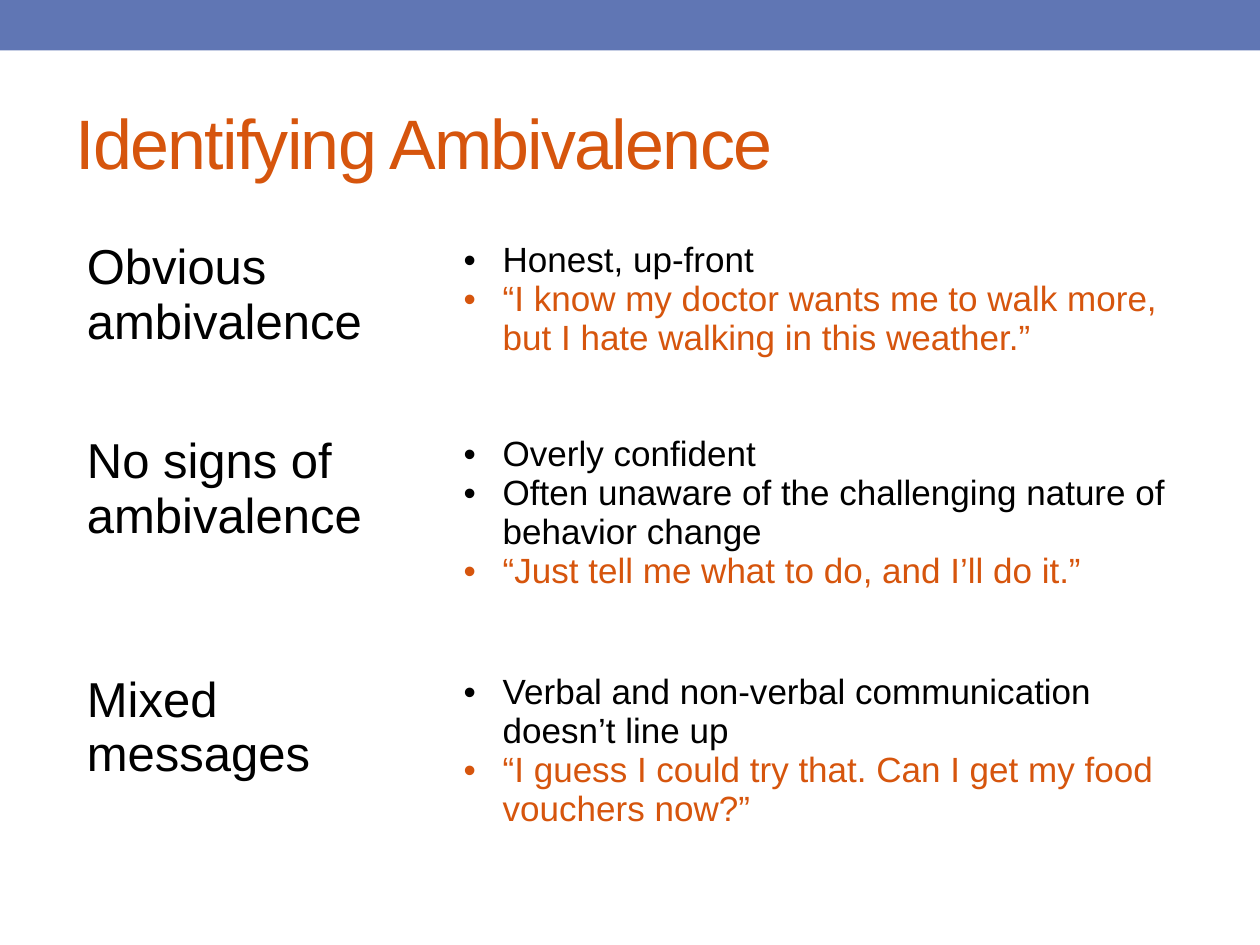
from pptx import Presentation
from pptx.dml.color import RGBColor
from pptx.enum.shapes import MSO_SHAPE
from pptx.enum.text import MSO_ANCHOR, PP_ALIGN
from pptx.oxml.ns import qn
from pptx.util import Inches, Pt
from lxml import etree

RECT = MSO_SHAPE.RECTANGLE
MIDDLE = MSO_ANCHOR.MIDDLE
LEFT = PP_ALIGN.LEFT

# Content: label, observations, client quote
TITLE = "Identifying Ambivalence"
ROWS = [
    ("Obvious ambivalence",
     ["Honest, up-front"],
     "“I know my doctor wants me to walk more, but I hate walking in this weather.”"),
    ("No signs of ambivalence",
     ["Overly confident",
      "Often unaware of the challenging nature of behavior change"],
     "“Just tell me what to do, and I’ll do it.”"),
    ("Mixed messages",
     ["Verbal and non-verbal communication doesn’t line up"],
     "“I guess I could try that. Can I get my food vouchers now?”"),
]

THEME = {
    "font": "Arial",
    "bar": RGBColor.from_string("6076B4"),
    "accent": RGBColor.from_string("D6550D"),
    "text": RGBColor.from_string("000000"),
    "title": 40, "label": 28, "bullet": 20,
}
COLS = [2.99, 5.86]
HEIGHTS = [1.54, 1.89, 1.89]
INDENT = Inches(0.31)


def style(para, size, color):
    para.alignment = LEFT
    for run in para.runs:
        run.font.name = THEME["font"]
        run.font.size = Pt(THEME[size])
        run.font.bold = False
        run.font.color.rgb = THEME[color]


def add_bullet(para):
    props = para._p.get_or_add_pPr()
    props.set("marL", str(INDENT))
    props.set("indent", str(-INDENT))
    font = etree.SubElement(props, qn("a:buFont"))
    font.set("typeface", THEME["font"])
    etree.SubElement(props, qn("a:buChar")).set("char", "•")


def main():
    deck = Presentation()
    deck.slide_width, deck.slide_height = Inches(10), Inches(7.5)
    slide = deck.slides.add_slide(deck.slide_layouts[5])

    # Top bar
    bar = slide.shapes.add_shape(RECT, 0, 0, deck.slide_width, Inches(0.4))
    bar.shadow.inherit = False
    bar.fill.solid()
    bar.fill.fore_color.rgb = THEME["bar"]
    bar.line.fill.background()

    # Title
    title = slide.shapes.title
    title.left, title.top = Inches(0.5), Inches(0.58)
    title.width, title.height = Inches(9), Inches(1.08)
    frame = title.text_frame
    frame.text = TITLE
    frame.vertical_anchor = MIDDLE
    head = frame.paragraphs[0]
    style(head, "title", "accent")
    head.runs[0]._r.get_or_add_rPr().set("spc", "-100")

    # Table
    table = slide.shapes.add_table(
        len(ROWS), len(COLS), Inches(0.59), Inches(1.86),
        Inches(sum(COLS)), Inches(sum(HEIGHTS))).table
    table.first_row = table.horz_banding = False
    for col, width in zip(table.columns, COLS):
        col.width = Inches(width)
    for row, height in zip(table.rows, HEIGHTS):
        row.height = Inches(height)

    # Plain cells without fill or borders
    for cell in table.iter_cells():
        props = cell._tc.get_or_add_tcPr()
        for side in ("lnL", "lnR", "lnT", "lnB"):
            line = etree.SubElement(props, qn("a:" + side), w="0")
            etree.SubElement(line, qn("a:noFill"))
        cell.fill.background()

    # Labels and bullets
    for row, (label, notes, quote) in zip(table.rows, ROWS):
        name, detail = row.cells
        name.text_frame.text = label
        style(name.text_frame.paragraphs[0], "label", "text")
        detail.text_frame.text = "\n".join(notes + [quote])
        for para in detail.text_frame.paragraphs:
            style(para, "bullet", "accent" if para.text == quote else "text")
            add_bullet(para)

    deck.save("out.pptx")


if __name__ == "__main__":
    main()
